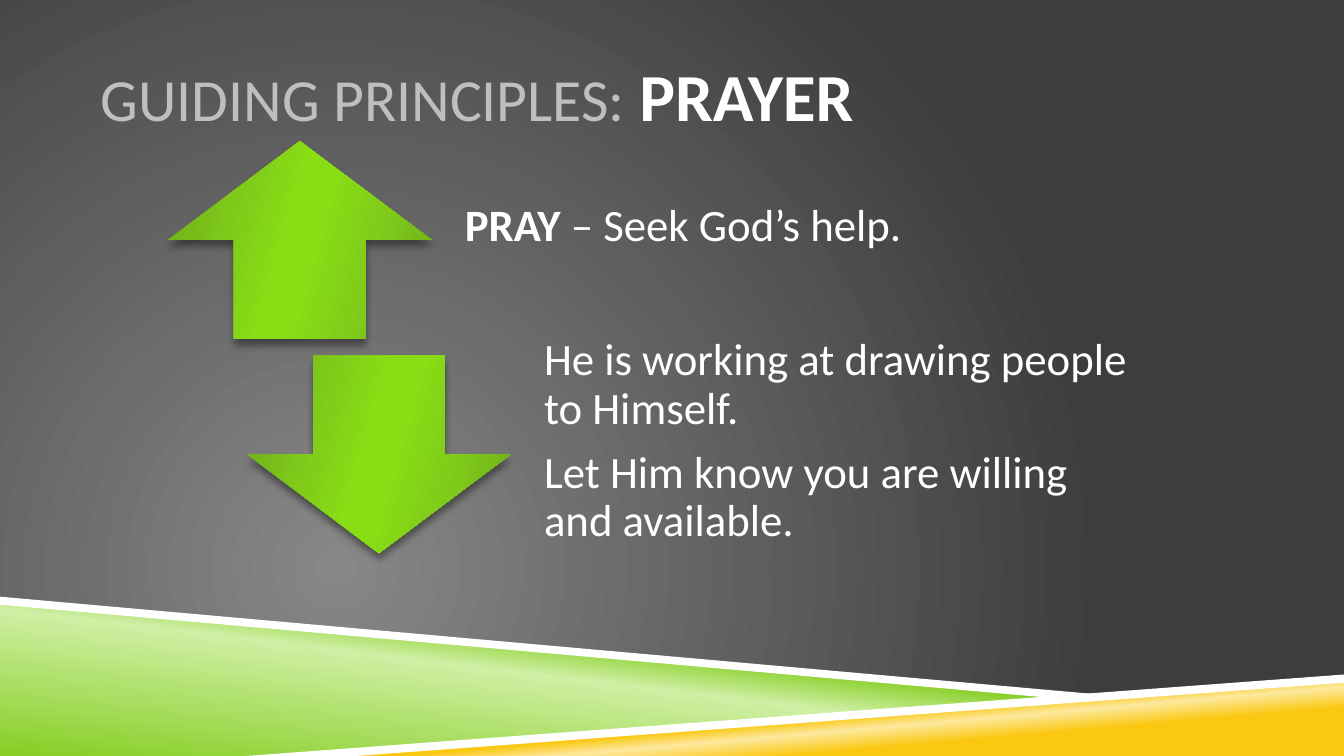
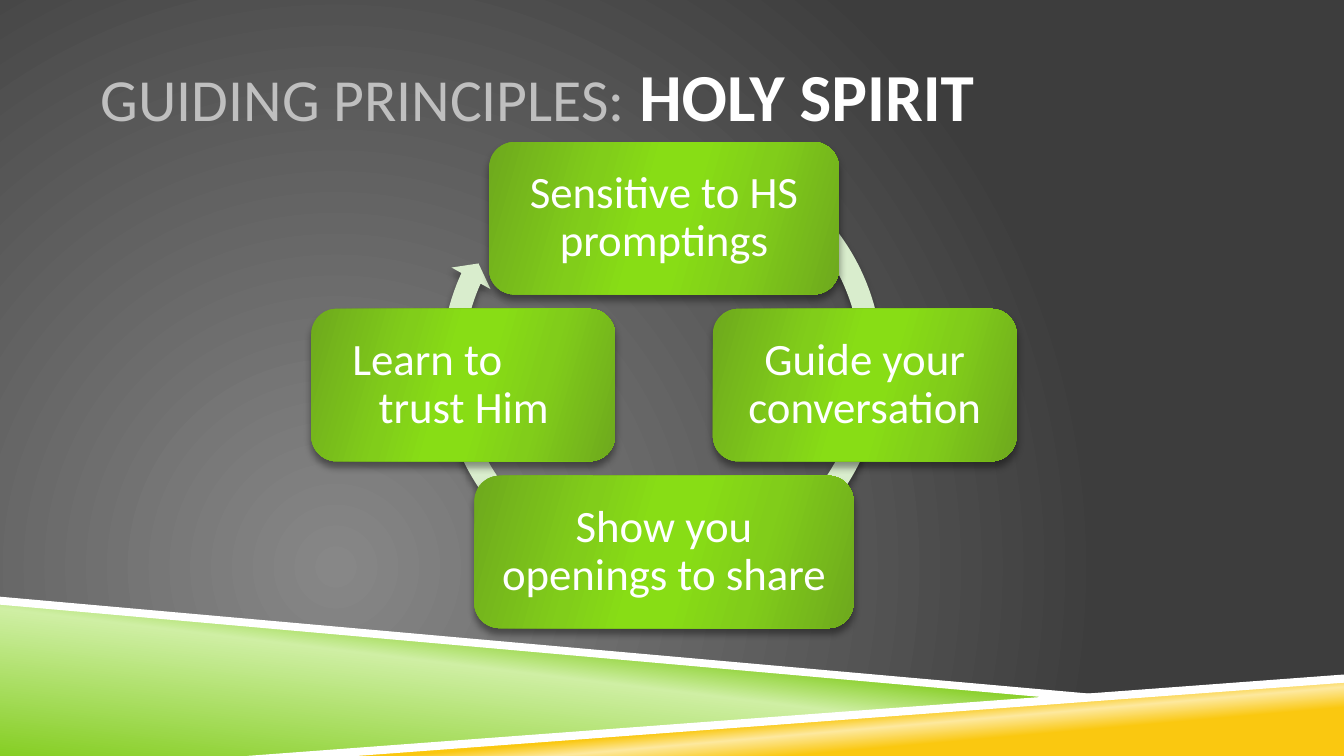
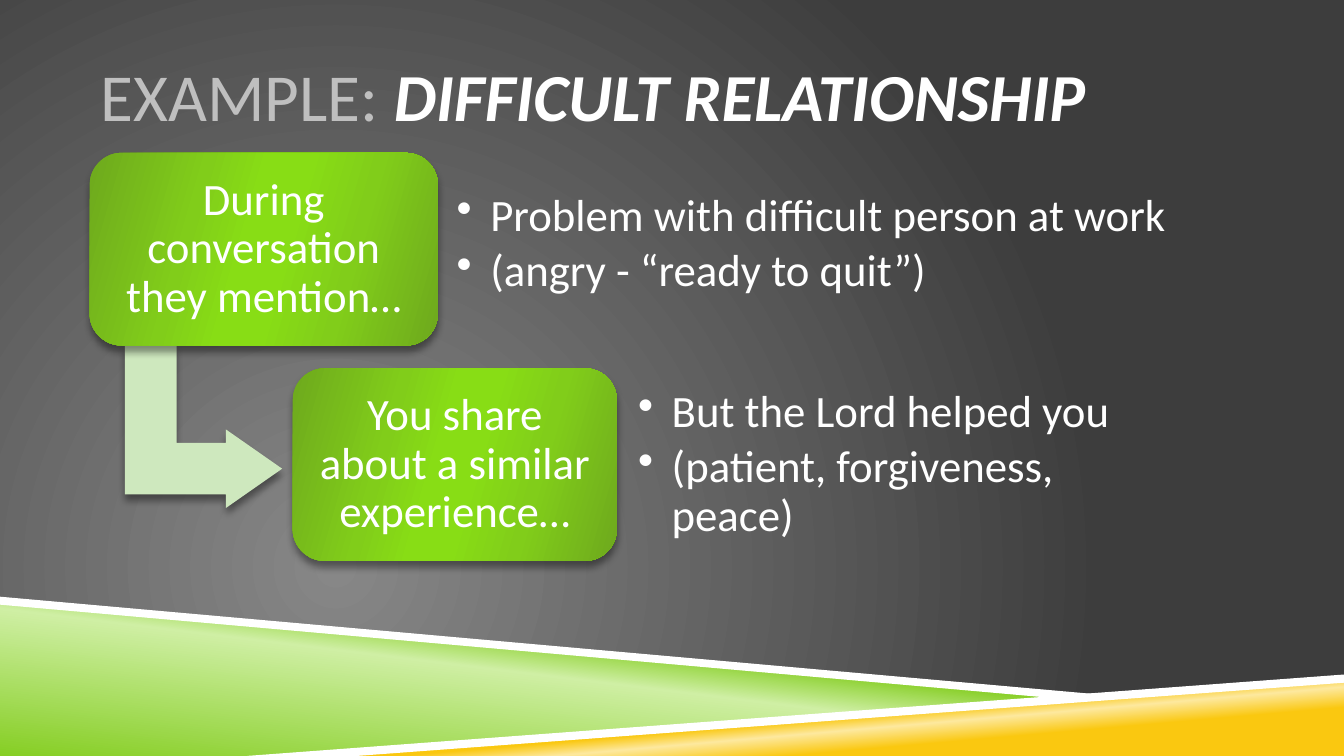
from dataclasses import dataclass
from typing import Any, Optional

import pptx
import pptx.dml.color
import pptx.enum.shapes
import pptx.enum.text
import pptx.oxml.ns
import pptx.util
from lxml import etree

Pt = pptx.util.Pt
qn = pptx.oxml.ns.qn
MSO = pptx.enum.shapes.MSO_SHAPE
ALIGN = pptx.enum.text.PP_ALIGN
Stops = tuple[tuple[int, str], ...]
Points = tuple[tuple[float, float], ...]


@dataclass(frozen=True)
class Theme:
    font: str = "Calibri"
    white: str = "FFFFFF"
    muted: str = "BFBFBF"
    cycle: str = "D9EDCD"
    bend: str = "CEE8BE"
    backdrop: Stops = ((0, "878787"), (100, "3D3D3D"))
    green: Stops = ((0, "6EA91D"), (30, "81CD1A"), (45, "88DD15"),
                    (55, "88DD15"), (73, "81CD1A"), (100, "6EA91D"))
    lime_band: Stops = ((0, "86CE24"), (52, "CFEFA4"), (66, "86CE24"))
    gold_band: Stops = ((28, "FAC810"), (40, "FDE99F"), (48, "FAC810"))
    green_angle: int = 16
    body: int = 24
    lead: int = 32
    title: int = 36


T = Theme()


@dataclass(frozen=True)
class Frame:
    x: float
    y: float
    w: float
    h: float

    def emu(self) -> tuple[int, int, int, int]:
        return Pt(self.x), Pt(self.y), Pt(self.w), Pt(self.h)


@dataclass(frozen=True)
class Run:
    text: str
    size: int = T.body
    color: str = T.white
    bold: bool = False
    italic: bool = False


@dataclass(frozen=True)
class Para:
    runs: tuple[Run, ...]
    align: Any = ALIGN.LEFT
    after: float = 8.4
    margin: float = 0
    indent: float = 0
    bullet: bool = False


@dataclass(frozen=True)
class Band:
    points: Points
    fill: Stops | str
    angle: int = 0


@dataclass(frozen=True)
class CycleNode:
    para: Para
    width: float
    dx: float
    row: int


@dataclass(frozen=True)
class Step:
    box: Frame
    label: str
    notes: Frame
    bullets: tuple[str, str]


@dataclass(frozen=True)
class PrayerArrow:
    preset: Any
    x: float
    y: float
    paras: tuple[Para, ...]


BANDS = (
    Band(((0, 322.6), (570.2, 373.7), (144, 405), (0, 405)), T.lime_band, 277),
    Band(((142.6, 405), (720, 362.9), (720, 405)), T.gold_band, 265),
    Band(((0, 319.7), (0, 324), (568.8, 374.4), (599, 373)), T.white),
    Band(((720, 361.4), (132.5, 405), (191.5, 405), (720, 365.8)), T.white),
)


def rgb(value: str) -> Any:
    return pptx.dml.color.RGBColor.from_string(value)


def write_gradient(owner: Any, stops: Stops, angle: Optional[int] = None) -> None:
    grad = owner.find(".//" + qn("a:gradFill"))
    for child in list(grad):
        grad.remove(child)
    gs_list = etree.SubElement(grad, qn("a:gsLst"))
    for pos, color in stops:
        gs = etree.SubElement(gs_list, qn("a:gs"), pos=str(pos * 1000))
        etree.SubElement(gs, qn("a:srgbClr"), val=color)
    if angle is None:
        path = etree.SubElement(grad, qn("a:path"), path="circle")
        etree.SubElement(path, qn("a:fillToRect"),
                         l="50000", t="100000", r="100000", b="50000")
    else:
        etree.SubElement(grad, qn("a:lin"), ang=str(angle * 60000), scaled="0")


def paint(sp: Any, fill: Stops | str, angle: int = 0) -> None:
    sp.line.fill.background()
    sp.shadow.inherit = False
    if isinstance(fill, str):
        sp.fill.solid()
        sp.fill.fore_color.rgb = rgb(fill)
    else:
        sp.fill.gradient()
        write_gradient(sp.element, fill, angle)


def add_shadow(sp: Any) -> None:
    effects = sp.element.spPr.find(qn("a:effectLst"))
    outer = etree.SubElement(effects, qn("a:outerShdw"), blurRad=str(Pt(4)),
                             dist=str(Pt(3.3)), dir="5400000", rotWithShape="0")
    color = etree.SubElement(outer, qn("a:srgbClr"), val="000000")
    etree.SubElement(color, qn("a:alpha"), val="40000")


def add_figure(s: Any, preset: Any, frame: Frame, fill: Stops | str = T.green,
               adjustments: tuple[float, ...] = ()) -> Any:
    sp = s.shapes.add_shape(preset, *frame.emu())
    for i, value in enumerate(adjustments):
        sp.adjustments[i] = value
    paint(sp, fill, T.green_angle)
    add_shadow(sp)
    return sp


def add_runs(p: Any, runs: tuple[Run, ...]) -> None:
    for run in runs:
        r = p.add_run()
        r.text = run.text
        r.font.name = T.font
        r.font.size = Pt(run.size)
        r.font.bold = run.bold
        r.font.italic = run.italic
        r.font.color.rgb = rgb(run.color)


def set_frame(tf: Any, insets: tuple[float, float, float, float]) -> None:
    tf.word_wrap = True
    tf.auto_size = pptx.enum.text.MSO_AUTO_SIZE.NONE
    tf.vertical_anchor = pptx.enum.text.MSO_ANCHOR.MIDDLE
    tf.margin_left, tf.margin_top, tf.margin_right, tf.margin_bottom = map(Pt, insets)


def write_text(sp: Any, paras: tuple[Para, ...],
               insets: tuple[float, float, float, float] = (7.2, 7.2, 7.2, 7.2)) -> None:
    tf = sp.text_frame
    set_frame(tf, insets)
    for i, para in enumerate(paras):
        p = tf.add_paragraph() if i else tf.paragraphs[0]
        props = p._p.get_or_add_pPr()
        props.set("marL", str(Pt(para.margin)))
        props.set("indent", str(Pt(para.indent)))
        if para.bullet:
            etree.SubElement(props, qn("a:buChar"), char="•")
        p.alignment = para.align
        p.line_spacing = 0.9
        p.space_after = Pt(para.after)
        add_runs(p, para.runs)


def centred(text: str) -> Para:
    return Para((Run(text),), ALIGN.CENTER)


def bulleted(text: str) -> Para:
    return Para((Run(text),), after=3.6, margin=18, indent=-18, bullet=True)


def add_titled_slide(prs: Any, layout: Any, lead: Run, topic: Run) -> Any:
    s = prs.slides.add_slide(layout)
    sp = s.shapes.title
    sp.left, sp.top, sp.width, sp.height = Frame(54, 16.6, 612, 67.7).emu()
    set_frame(sp.text_frame, (0, 3.6, 0, 3.6))
    p = sp.text_frame.paragraphs[0]
    p.alignment = ALIGN.LEFT
    add_runs(p, (lead, topic))
    return s


def dress_layout(layout: Any, s: Any) -> None:
    layout.background.fill.gradient()
    write_gradient(layout.element, T.backdrop)
    for ph in list(layout.placeholders)[1:]:
        ph.element.getparent().remove(ph.element)
    shapes = []
    for band in BANDS:
        start, *rest = [(Pt(x), Pt(y)) for x, y in band.points]
        builder = s.shapes.build_freeform(*start, scale=1.0)
        builder.add_line_segments(rest, close=True)
        sp = builder.convert_to_shape()
        paint(sp, band.fill, band.angle)
        shapes.append(sp)
    for sp in shapes:
        layout.shapes.element.append(sp.element)


def draw_prayer(s: Any) -> None:
    width, height, gap, text_width = 141.2, 105.9, 4.2, 342.7
    arrows = (
        PrayerArrow(MSO.UP_ARROW, 90, 75.6, (
            Para((Run("PRAY ", bold=True), Run("– Seek God’s help."))),)),
        PrayerArrow(MSO.DOWN_ARROW, 132.4, 190.5, (
            Para((Run("He is working at drawing people to Himself."),)),
            Para((Run("Let Him know you are willing and available."),)))),
    )
    for arrow in arrows:
        add_figure(s, arrow.preset, Frame(arrow.x, arrow.y, width, height))
        frame = Frame(arrow.x + width + gap, arrow.y, text_width, height)
        write_text(s.shapes.add_textbox(*frame.emu()), arrow.paras,
                   (13.7, 0, 13.7, 13.7))


def draw_holy_spirit(s: Any) -> None:
    centre, top, pitch, height, reach = 355.7, 76.1, 89.4, 81.6, 107.6
    nodes = (
        CycleNode(centred("Sensitive to HS promptings"), 187.4, 0, 0),
        CycleNode(centred("Guide your conversation"), 162.7, reach, 1),
        CycleNode(centred("Show you openings to share"), 203.2, 0, 2),
        CycleNode(Para((Run("Learn to trust Him"),), margin=25, indent=-14),
                  162.7, -reach, 1),
    )
    add_figure(s, MSO.CIRCULAR_ARROW, Frame(230.4, 71.3, 248.4, 248.4), T.cycle,
               (0.047, 2.729, 122.642, 184.332, 0.048))
    for node in nodes:
        frame = Frame(centre + node.dx - node.width / 2, top + node.row * pitch,
                      node.width, height)
        sp = add_figure(s, MSO.ROUNDED_RECTANGLE, frame)
        write_text(sp, (node.para,))


def draw_example(s: Any) -> None:
    steps = (
        Step(Frame(48, 81.9, 186.6, 103.2), "During conversation they mention…",
             Frame(237.6, 89.3, 422.6, 83.5),
             ("Problem with difficult person at work", "(angry - “ready to quit”)")),
        Step(Frame(156.8, 197.3, 173.7, 103.2), "You share about a similar experience…",
             Frame(334.8, 207.4, 298.1, 83.5),
             ("But the Lord helped you", "(patient, forgiveness, peace)")),
    )
    bend = add_figure(s, MSO.BENT_UP_ARROW, Frame(65.5, 186.5, 87.1, 84.2), T.bend,
                      (0.328, 0.25, 0.358))
    bend.rotation = 90
    for step in steps:
        sp = add_figure(s, MSO.ROUNDED_RECTANGLE, step.box)
        write_text(sp, (centred(step.label),))
        write_text(s.shapes.add_textbox(*step.notes.emu()),
                   tuple(bulleted(text) for text in step.bullets))


def main() -> None:
    prs = pptx.Presentation()
    prs.slide_width, prs.slide_height = Pt(720), Pt(405)
    layout = prs.slide_layouts[5]
    principles = Run("GUIDING PRINCIPLES: ", T.lead, T.muted)
    prayer = add_titled_slide(prs, layout, principles,
                              Run("PRAYER", T.title, bold=True))
    dress_layout(layout, prayer)
    draw_prayer(prayer)
    draw_holy_spirit(add_titled_slide(prs, layout, principles,
                                      Run("HOLY SPIRIT", T.title, bold=True)))
    draw_example(add_titled_slide(
        prs, layout, Run("EXAMPLE: ", T.title, T.muted),
        Run("DIFFICULT RELATIONSHIP", T.title, bold=True, italic=True)))
    prs.save("out.pptx")


if __name__ == "__main__":
    main()
